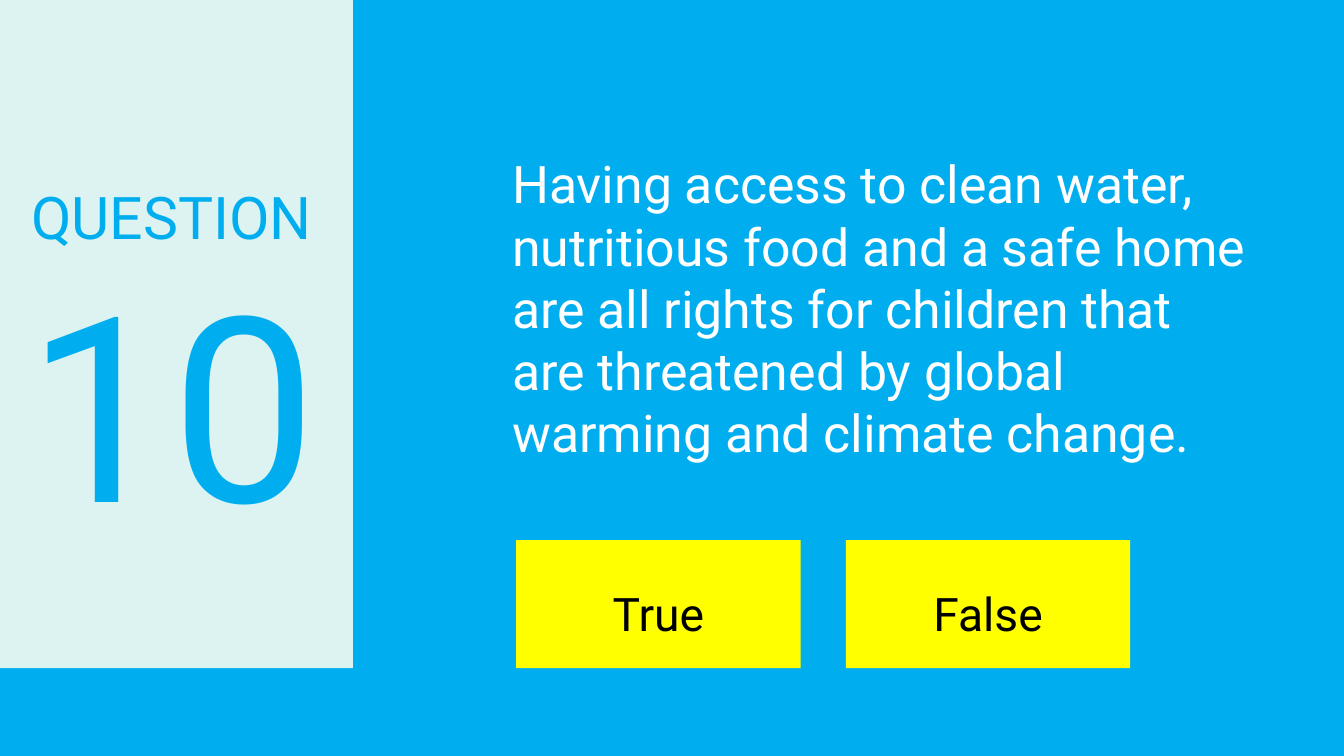
import pptx
import pptx.util
import pptx.dml.color
import pptx.enum.shapes
import pptx.enum.text
from dataclasses import dataclass

HEADING = "QUESTION"
NUMBER = "10"
STATEMENT = (
    "Having access to clean water, nutritious food and a safe home are all "
    "rights for children that are threatened by global warming and climate change."
)
ANSWERS = ["True", "False"]


@dataclass(frozen=True)
class Theme:
    font: str = "Roboto"
    blue: str = "00AEEF"
    panel: str = "DDF3F1"
    button: str = "FFFF00"
    white: str = "FFFFFF"
    black: str = "000000"
    statement_size: int = 37
    heading_size: int = 42
    number_size: int = 185
    answer_size: int = 33


THEME = Theme()
SLIDE_WIDTH, SLIDE_HEIGHT = 13.33, 7.5
PANEL_WIDTH, PANEL_HEIGHT = 3.5, 6.63
BUTTON_WIDTH, BUTTON_HEIGHT, BUTTON_GAP = 2.82, 1.27, 0.45
BUTTON_LEFT = 5.12
BUTTON_TOP = PANEL_HEIGHT - BUTTON_HEIGHT
LABEL_OFFSET, LABEL_HEIGHT = 0.26, 0.76

ALIGN = pptx.enum.text.PP_ALIGN
ANCHOR = pptx.enum.text.MSO_ANCHOR
FIT = pptx.enum.text.MSO_AUTO_SIZE


def color(code):
    return pptx.dml.color.RGBColor.from_string(code)


def inches(box):
    return [pptx.util.Inches(length) for length in box]


def add_block(slide, box, fill):
    """Add a plain rectangle without outline."""
    shape = slide.shapes.add_shape(
        pptx.enum.shapes.MSO_SHAPE.RECTANGLE, *inches(box))
    shape.shadow.inherit = False
    shape.fill.solid()
    shape.fill.fore_color.rgb = color(fill)
    shape.line.fill.background()


def write(slide, text, box, size, ink, shape=None, align=ALIGN.LEFT,
          anchor=ANCHOR.TOP, spacing=1.0, margin=0.1, fit=FIT.SHAPE_TO_FIT_TEXT):
    """Put text in the given shape, or in a new text box."""
    shape = shape or slide.shapes.add_textbox(*inches(box))
    shape.left, shape.top, shape.width, shape.height = inches(box)
    frame = shape.text_frame
    frame.word_wrap = True
    frame.auto_size = fit
    frame.vertical_anchor = anchor
    frame.margin_left = frame.margin_right = pptx.util.Inches(margin)
    frame.margin_top = frame.margin_bottom = pptx.util.Inches(margin)
    paragraph = frame.paragraphs[0]
    paragraph.alignment = align
    paragraph.line_spacing = spacing
    run = paragraph.add_run()
    run.text = text
    run.font.name = THEME.font
    run.font.size = pptx.util.Pt(size)
    run.font.color.rgb = color(ink)


def main():
    presentation = pptx.Presentation()
    presentation.slide_width, presentation.slide_height = inches(
        (SLIDE_WIDTH, SLIDE_HEIGHT))
    slide = presentation.slides.add_slide(presentation.slide_layouts[5])
    slide.background.fill.solid()
    slide.background.fill.fore_color.rgb = color(THEME.blue)

    write(slide, STATEMENT, (4.98, 1.41, 7.48, 3.32), THEME.statement_size,
          THEME.white, shape=slide.shapes.title)

    add_block(slide, (0, 0, PANEL_WIDTH, PANEL_HEIGHT), THEME.panel)
    panel_format = dict(anchor=ANCHOR.MIDDLE, spacing=0.9, margin=0.05, fit=FIT.NONE)
    write(slide, HEADING, (0.26, 1.68, 3.34, 1.01), THEME.heading_size,
          THEME.blue, **panel_format)
    write(slide, NUMBER, (0.18, 2.59, 3.05, 3.12), THEME.number_size,
          THEME.blue, align=ALIGN.CENTER, **panel_format)

    for index, answer in enumerate(ANSWERS):
        left = BUTTON_LEFT + index * (BUTTON_WIDTH + BUTTON_GAP)
        add_block(slide, (left, BUTTON_TOP, BUTTON_WIDTH, BUTTON_HEIGHT), THEME.button)
        write(slide, answer,
              (left, BUTTON_TOP + LABEL_OFFSET, BUTTON_WIDTH, LABEL_HEIGHT),
              THEME.answer_size, THEME.black, align=ALIGN.CENTER, spacing=1.15)

    presentation.save("out.pptx")


if __name__ == "__main__":
    main()
